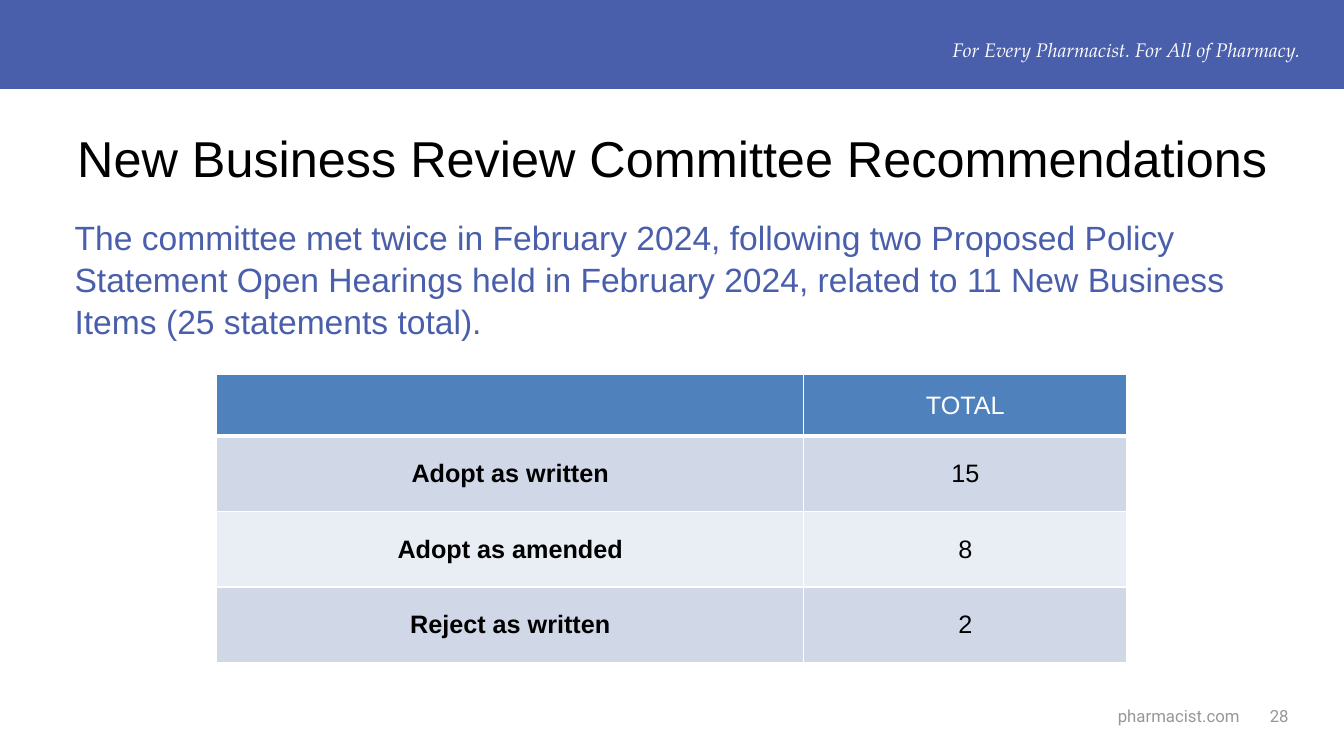
from dataclasses import dataclass

import pptx
import pptx.dml.color
import pptx.enum.shapes
import pptx.enum.text
import pptx.oxml
import pptx.oxml.ns
import pptx.slide
import pptx.table
import pptx.text.text
import pptx.util

Pt = pptx.util.Pt
RGBColor = pptx.dml.color.RGBColor
Align = pptx.enum.text.PP_ALIGN
Anchor = pptx.enum.text.MSO_ANCHOR

INDIGO = RGBColor(0x4A, 0x5F, 0xAB)
HEADER_BLUE = RGBColor(0x4F, 0x81, 0xBD)
BANDS = (RGBColor(0xD0, 0xD8, 0xE8), RGBColor(0xE9, 0xED, 0xF4))
GREY = RGBColor(0x96, 0x97, 0x99)
WHITE = RGBColor(0xFF, 0xFF, 0xFF)
BLACK = RGBColor(0x00, 0x00, 0x00)

PAGE_WIDTH, PAGE_HEIGHT = 960, 540
BANNER_HEIGHT = 63.5


@dataclass(frozen=True)
class Label:
    text: str
    left: float
    top: float
    width: float
    height: float
    size: float
    color: RGBColor
    font: str = "Arial"
    italic: bool = False
    align: Align = Align.LEFT
    spacing: float = 1.0
    inset_x: float = 0
    inset_y: float = 0


@dataclass(frozen=True)
class Outcome:
    decision: str
    total: int


LABELS = (
    Label("For Every Pharmacist. For All of Pharmacy.", 606.2, 23.8, 329.8, 24.5,
          14, WHITE, font="TeX Gyre Pagella", italic=True, align=Align.RIGHT,
          inset_x=7.2, inset_y=3.6),
    Label("pharmacist.com", 798.5, 504, 89.3, 14.4, 12, GREY, font="Roboto"),
    Label("28", 907, 504, 20.9, 14.4, 12, GREY, font="Roboto"),
    Label("New Business Review Committee Recommendations", 35.3, 83.5, 890, 69.8,
          36, BLACK, align=Align.CENTER, inset_x=7.2, inset_y=7.2),
    Label("The committee met twice in February 2024, following two Proposed Policy "
          "Statement Open Hearings held in February 2024, related to 11 New Business "
          "Items (25 statements total).", 53.3, 153.4, 833.8, 116.6,
          24, INDIGO, spacing=1.05),
)

OUTCOMES = (
    Outcome("Adopt as written", 15),
    Outcome("Adopt as amended", 8),
    Outcome("Reject as written", 2),
)
TABLE_LEFT, TABLE_TOP = 154.9, 267.5
COLUMN_WIDTHS = (419.1, 231.1)
HEADER_HEIGHT, ROW_HEIGHT = 44, 53.9


def write_text(frame: pptx.text.text.TextFrame, text: str, *, size: float,
               color: RGBColor, font: str = "Arial", bold: bool = False,
               italic: bool = False, align: Align = Align.LEFT,
               spacing: float = 1.0) -> None:
    para = frame.paragraphs[0]
    para.alignment = align
    para.line_spacing = spacing
    span = para.add_run()
    span.text = text
    span.font.name = font
    span.font.size = Pt(size)
    span.font.bold = bold
    span.font.italic = italic
    span.font.color.rgb = color


def add_banner(page: pptx.slide.Slide) -> None:
    banner = page.shapes.add_shape(pptx.enum.shapes.MSO_SHAPE.RECTANGLE,
                                   0, 0, Pt(PAGE_WIDTH), Pt(BANNER_HEIGHT))
    banner.shadow.inherit = False
    banner.fill.solid()
    banner.fill.fore_color.rgb = INDIGO
    banner.line.fill.background()


def add_label(page: pptx.slide.Slide, label: Label) -> None:
    box = page.shapes.add_textbox(Pt(label.left), Pt(label.top),
                                  Pt(label.width), Pt(label.height))
    frame = box.text_frame
    frame.word_wrap = True
    frame.margin_left = frame.margin_right = Pt(label.inset_x)
    frame.margin_top = frame.margin_bottom = Pt(label.inset_y)
    write_text(frame, label.text, size=label.size, color=label.color,
               font=label.font, italic=label.italic, align=label.align,
               spacing=label.spacing)


def set_borders(cell: pptx.table._Cell, top: float, bottom: float) -> None:
    """Give the cell white borders, 1 point wide at the sides."""
    properties = cell._tc.get_or_add_tcPr()
    widths = {"lnL": 1, "lnR": 1, "lnT": top, "lnB": bottom}
    for position, (tag, width) in enumerate(widths.items()):
        properties.insert(position, pptx.oxml.parse_xml(
            f'<a:{tag} {pptx.oxml.ns.nsdecls("a")} w="{Pt(width)}">'
            f'<a:solidFill><a:srgbClr val="{WHITE}"/></a:solidFill></a:{tag}>'))


def add_outcome_table(page: pptx.slide.Slide) -> None:
    rows = [("", "TOTAL")] + [(item.decision, str(item.total)) for item in OUTCOMES]
    heights = [HEADER_HEIGHT] + [ROW_HEIGHT] * len(OUTCOMES)
    table = page.shapes.add_table(len(rows), len(COLUMN_WIDTHS),
                                  Pt(TABLE_LEFT), Pt(TABLE_TOP),
                                  Pt(sum(COLUMN_WIDTHS)), Pt(sum(heights))).table
    for column, width in zip(table.columns, COLUMN_WIDTHS):
        column.width = Pt(width)
    for row_index, (texts, height) in enumerate(zip(rows, heights)):
        table.rows[row_index].height = Pt(height)
        is_header = row_index == 0
        for column_index, text in enumerate(texts):
            cell = table.cell(row_index, column_index)
            cell.vertical_anchor = Anchor.MIDDLE
            cell.fill.solid()
            cell.fill.fore_color.rgb = (HEADER_BLUE if is_header
                                        else BANDS[(row_index - 1) % 2])
            set_borders(cell, top=3 if row_index == 1 else 1,
                        bottom=3 if is_header else 1)
            if text:
                write_text(cell.text_frame, text, size=18, align=Align.CENTER,
                           color=WHITE if is_header else BLACK,
                           bold=not is_header and column_index == 0)


def main() -> None:
    deck = pptx.Presentation()
    deck.slide_width = Pt(PAGE_WIDTH)
    deck.slide_height = Pt(PAGE_HEIGHT)
    page = deck.slides.add_slide(deck.slide_layouts[6])
    add_banner(page)
    for label in LABELS:
        add_label(page, label)
    add_outcome_table(page)
    deck.save("out.pptx")


if __name__ == "__main__":
    main()
